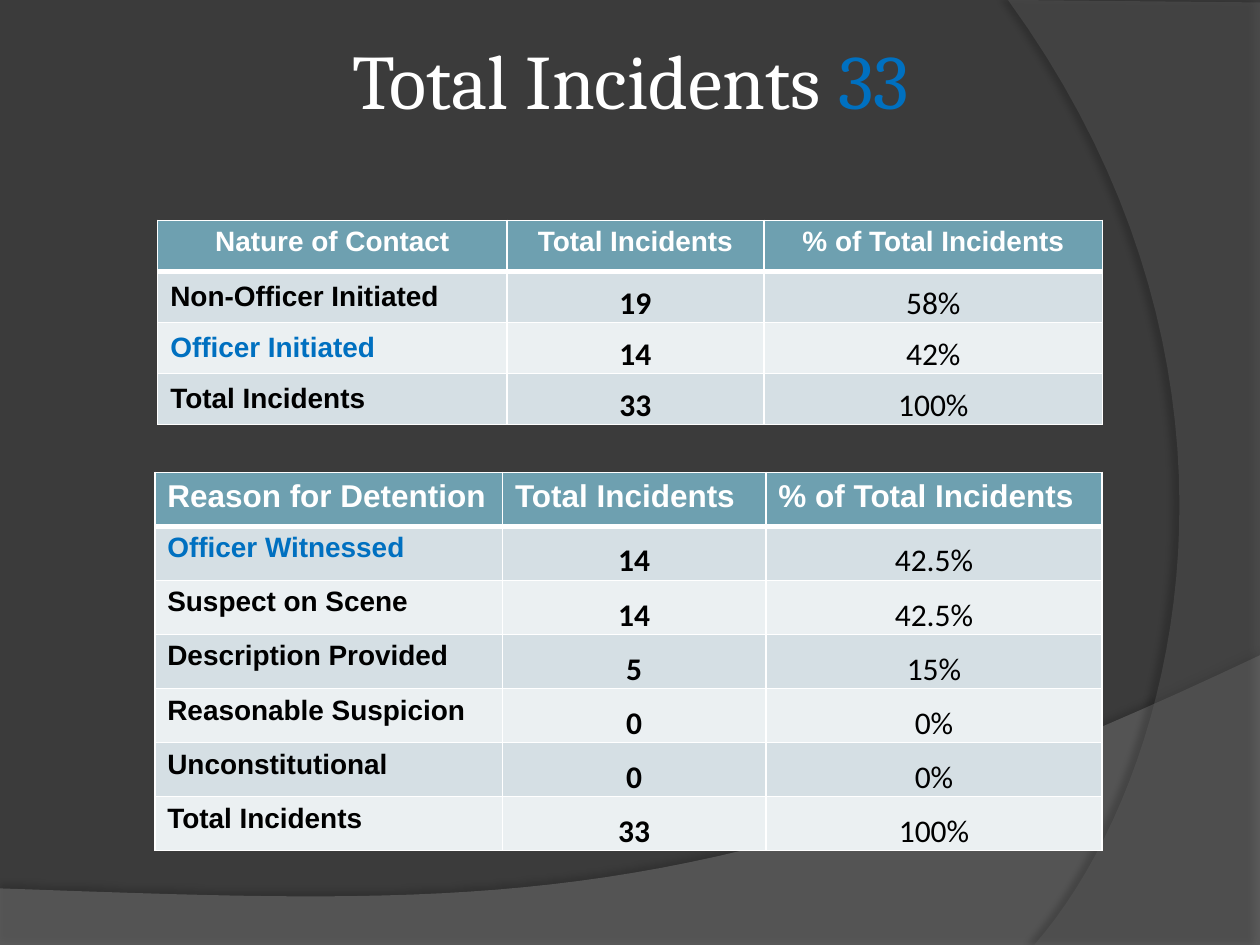
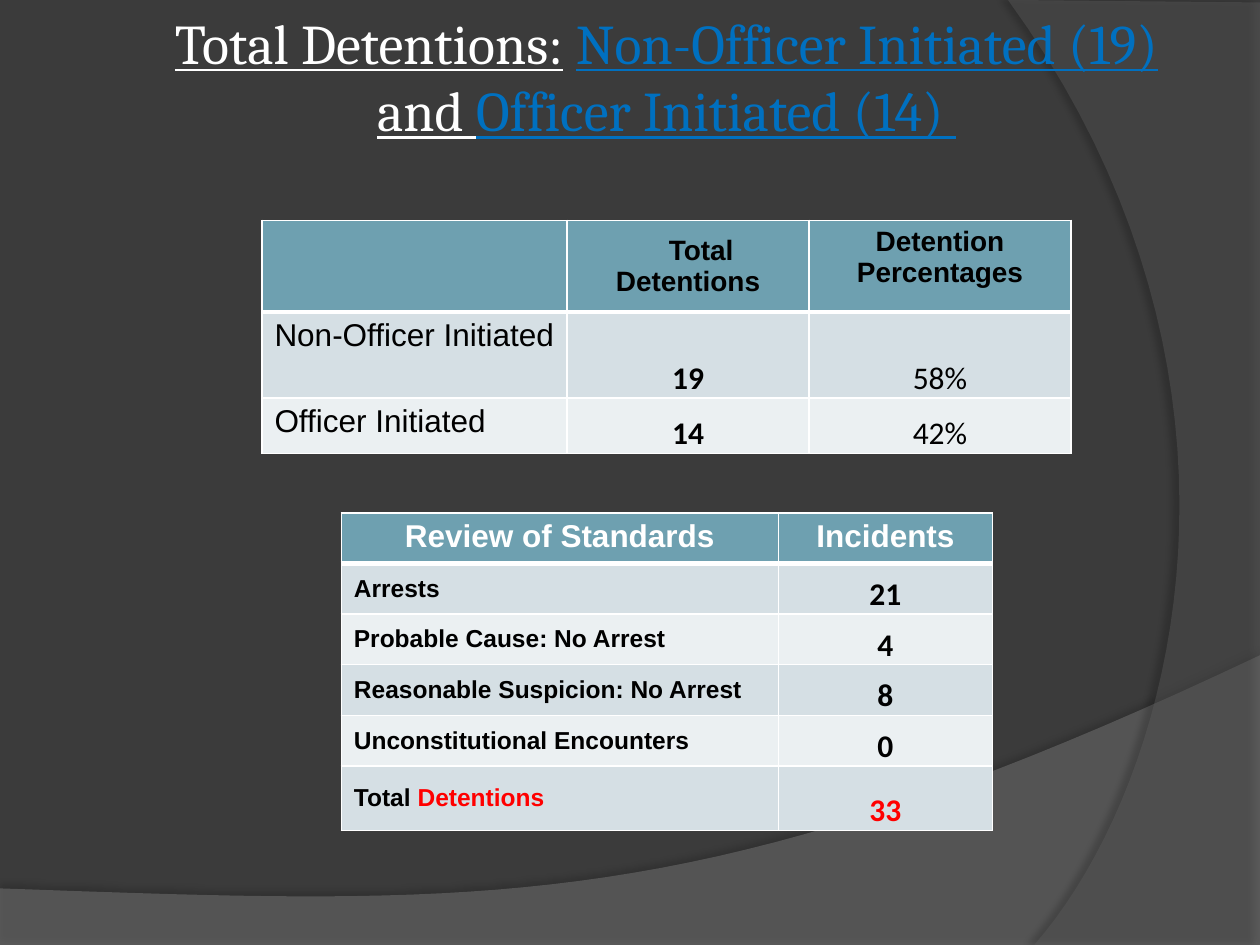
from lxml.etree import SubElement
from pptx import Presentation
from pptx.dml.color import RGBColor
from pptx.enum.text import MSO_ANCHOR, MSO_AUTO_SIZE, PP_ALIGN
from pptx.oxml.ns import qn
from pptx.util import Cm, Pt

WHITE, BLACK, BLUE, RED = "FFFFFF", "000000", "0070C0", "FF0000"
BACK, HEAD, BANDS = "3B3B3B", "6EA0B0", ("EBF0F2", "D5DFE4")
TOP, MID, LOW = MSO_ANCHOR.TOP, MSO_ANCHOR.MIDDLE, MSO_ANCHOR.BOTTOM
LEFT, CENTER = PP_ALIGN.LEFT, PP_ALIGN.CENTER


def write(para, runs, **base):
    """Add runs, given as a string or as (text, changes) pairs, in the base format."""
    for text, extra in [(runs, {})] if isinstance(runs, str) else runs:
        run = para.add_run()
        run.text = text
        for key, val in {**base, **extra}.items():
            if key == "color":
                run.font.color.rgb = RGBColor.from_string(val)
            else:
                setattr(run.font, key, val)


def curve(a, b, c, d, steps=40):
    """Points along a cubic Bezier curve, without its start."""
    points = []
    for i in range(1, steps + 1):
        t = i / steps
        u = 1 - t
        points.append(tuple(u**3 * p + 3 * u * u * t * q + 3 * u * t * t * r + t**3 * s
                            for p, q, r, s in zip(a, b, c, d)))
    return points


deck = Presentation()
deck.slide_width, deck.slide_height = Cm(25.4), Cm(19.05)
layout = deck.slide_layouts[5]
layout.background.fill.solid()
layout.background.fill.fore_color.rgb = RGBColor.from_string(BACK)

blue = {"color": BLUE}
line = {"underline": True}
pages = [
    {
        "title": [("Total Incidents ", {}), ("33", blue)],
        "box": (2.34, 0, 20.75, 3.18),
        "size": 44,
        "tables": [
            {
                "at": (3.18, 4.44), "cols": (7.04, 5.18, 6.83), "rows": [1.03] * 4,
                "head": {"size": Pt(16)}, "label": {"size": Pt(16)},
                "anchor": MID, "align": CENTER,
                "cells": [
                    ("Nature of Contact", "Total Incidents", "% of Total Incidents"),
                    ("Non-Officer Initiated", "19", "58%"),
                    ([("Officer Initiated", blue)], "14", "42%"),
                    ("Total Incidents", "33", "100%"),
                ],
            },
            {
                "at": (3.12, 9.52), "cols": (7.01, 5.31, 6.78), "rows": [1.09] * 7,
                "head": {"size": Pt(18)}, "label": {"size": Pt(16)},
                "anchor": TOP, "align": LEFT,
                "cells": [
                    ("Reason for Detention", "Total Incidents", "% of Total Incidents"),
                    ([("Officer Witnessed", blue)], "14", "42.5%"),
                    ("Suspect on Scene", "14", "42.5%"),
                    ("Description Provided", "5", "15%"),
                    ("Reasonable Suspicion", "0", "0%"),
                    ("Unconstitutional", "0", "0%"),
                    ("Total Incidents", "33", "100%"),
                ],
            },
        ],
    },
    {
        "title": [("Total Detentions:", line), (" ", {}),
                  ("Non-Officer Initiated (19) ", {**line, **blue}),
                  ("and ", line), ("Officer Initiated (14) ", {**line, **blue})],
        "box": (3.18, -0.33, 20.52, 3.71),
        "size": 32,
        "tables": [
            {
                "at": (6.88, 10.34), "cols": (8.81, 4.32), "rows": [1.02] * 5 + [1.3],
                "head": {"size": Pt(18)}, "label": {"size": Pt(14)},
                "anchor": MID, "align": CENTER,
                "cells": [
                    ("Review of Standards", "Incidents"),
                    ("Arrests", "21"),
                    ("Probable Cause: No Arrest", "4"),
                    ("Reasonable Suspicion: No Arrest", "8"),
                    ("Unconstitutional Encounters", "0"),
                    ([("Total ", {}), ("Detentions", {"color": RED})],
                     [("33", {"color": RED})]),
                ],
            },
            {
                "at": (5.28, 4.44), "cols": (6.15, 4.88, 5.28), "rows": (1.85, 1.73, 1.12),
                "head": {"size": Pt(16), "color": BLACK},
                "label": {"size": Pt(18), "bold": False},
                "anchor": TOP, "align": CENTER,
                "cells": [
                    ("", "Total Detentions", "Detention Percentages"),
                    ("Non-Officer Initiated", "19", "58%"),
                    ("Officer Initiated", "14", "42%"),
                ],
            },
        ],
    },
]

for page in pages:
    slide = deck.slides.add_slide(layout)
    title = slide.shapes.title
    title.left, title.top, title.width, title.height = map(Cm, page["box"])
    frame = title.text_frame
    style = {"word_wrap": True, "auto_size": MSO_AUTO_SIZE.NONE, "vertical_anchor": MID}
    style.update({f"margin_{side}": Cm(0.13) for side in ("left", "top", "right", "bottom")})
    for key, val in style.items():
        setattr(frame, key, val)
    para = frame.paragraphs[0]
    para.alignment = CENTER
    write(para, page["title"], name="Cambria", size=Pt(page["size"]), color=WHITE)

    for data in page["tables"]:
        cells, cols, rows = data["cells"], data["cols"], data["rows"]
        table = slide.shapes.add_table(
            len(rows), len(cols), *map(Cm, (*data["at"], sum(cols), sum(rows)))).table
        for col, width in zip(table.columns, cols):
            col.width = Cm(width)
        for r, (row, height) in enumerate(zip(table.rows, rows)):
            row.height = Cm(height)
            for c, cell in enumerate(row.cells):
                props = cell._tc.get_or_add_tcPr()
                for side in "LRTB":
                    thick = (r, side) in ((0, "B"), (1, "T"))
                    edge = SubElement(props, qn(f"a:ln{side}"), w=str(Pt(3 if thick else 1)))
                    SubElement(SubElement(edge, qn("a:solidFill")), qn("a:srgbClr"), val=WHITE)
                cell.fill.solid()
                cell.fill.fore_color.rgb = RGBColor.from_string(BANDS[r % 2] if r else HEAD)
                para = cell.text_frame.paragraphs[0]
                font = {"name": "Arial", "bold": True, "color": BLACK}
                if r == 0:
                    font.update({"color": WHITE, **data["head"]})
                    para.alignment = data["align"]
                elif c == 0:
                    font.update(data["label"])
                    cell.vertical_anchor = data["anchor"]
                else:
                    font.update(name="Calibri", size=Pt(18), bold=c == 1)
                    para.alignment = CENTER
                    cell.vertical_anchor = LOW
                    for side in ("left", "top", "right", "bottom"):
                        setattr(cell, f"margin_{side}", 0)
                if cells[r][c]:
                    write(para, cells[r][c], **font)
                if cells[r][c] == "Total Detentions":
                    cell.vertical_anchor = MID
                    para._p.get_or_add_pPr().set("indent", str(Pt(15)))

# Shared bands: outline, fill, opacity, shadow opacity, distance and angle
wave = [(0, 17.91), (0, 19.08), (25.4, 19.08), (25.4, 13.21)]
wave += curve(wave[-1], (14.2, 18.52), (9.93, 18.26), wave[0])
arc = [(25.4, 0.05), (25.4, 19.05), (20.85, 19.05)]
arc += curve(arc[-1], (23.75, 15.72), (25.86, 7.62), (20.32, 0))
bands = [(wave, "7F7F7F", 45, 35, 3.5, 270), (arc, "5E5E5E", 40, 45, 4, 180)]
for spot, (points, color, alpha, dark, dist, angle) in enumerate(bands, 2):
    first, *rest = [(Cm(x), Cm(y)) for x, y in points]
    pen = deck.slides[0].shapes.build_freeform(*first)
    pen.add_line_segments(rest, close=True)
    band = pen.convert_to_shape()
    band.fill.solid()
    band.fill.fore_color.rgb = RGBColor.from_string(color)
    band.line.fill.background()
    band.shadow.inherit = False
    props = band.element.spPr
    tint = props.find(qn("a:solidFill"))[0]
    SubElement(tint, qn("a:alpha"), val=str(alpha * 1000))
    shade = SubElement(props.find(qn("a:effectLst")), qn("a:outerShdw"), blurRad=str(Pt(4)),
                       dist=str(Pt(dist)), dir=str(angle * 60000), rotWithShape="0")
    tint = SubElement(shade, qn("a:srgbClr"), val=BLACK)
    SubElement(tint, qn("a:alpha"), val=str(dark * 1000))
    layout.shapes.element.insert(spot, band.element)

deck.save("out.pptx")
